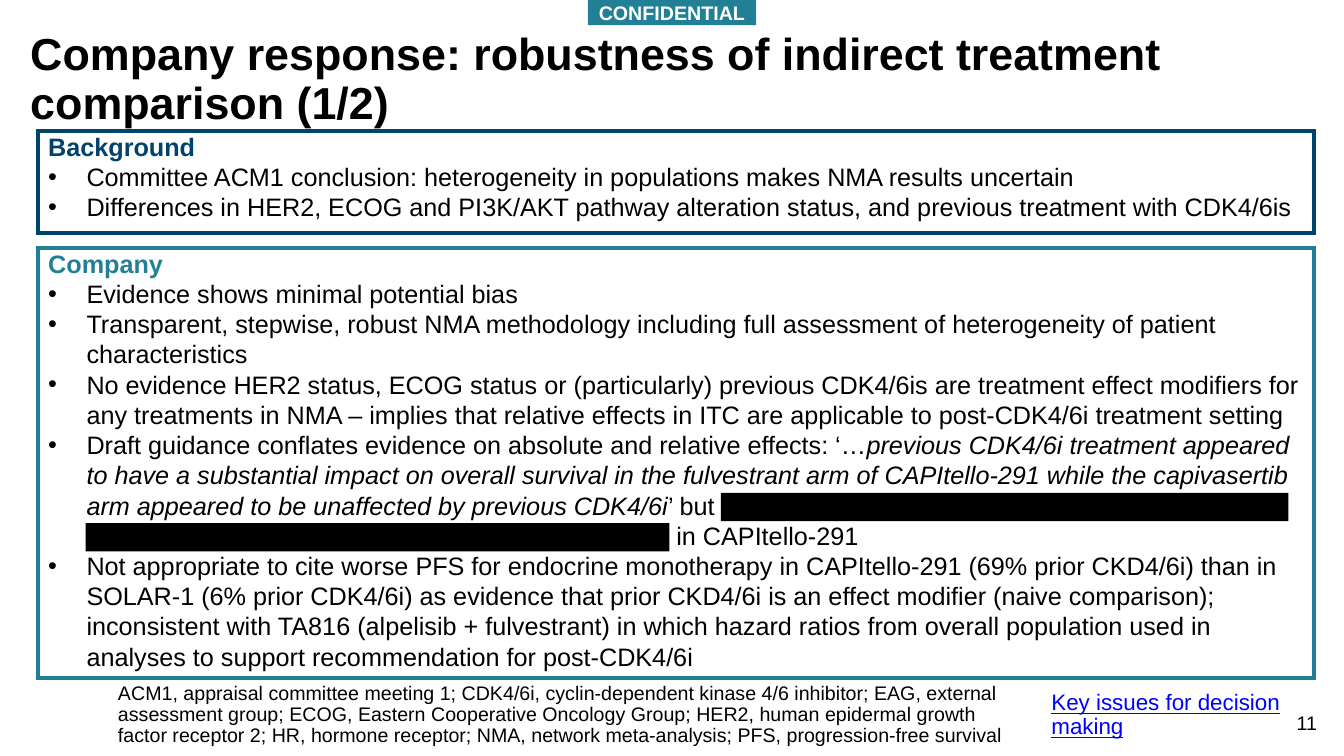
from lxml import etree
from pptx import Presentation
from pptx.dml.color import RGBColor
from pptx.enum.shapes import MSO_SHAPE
from pptx.enum.text import MSO_ANCHOR, MSO_AUTO_SIZE, PP_ALIGN
from pptx.oxml.ns import qn
from pptx.util import Inches, Pt

RECTANGLE = MSO_SHAPE.RECTANGLE
TOP, MIDDLE, BOTTOM = MSO_ANCHOR.TOP, MSO_ANCHOR.MIDDLE, MSO_ANCHOR.BOTTOM
LEFT, CENTER, RIGHT = PP_ALIGN.LEFT, PP_ALIGN.CENTER, PP_ALIGN.RIGHT
NO_FIT = MSO_AUTO_SIZE.NONE

BLACK = RGBColor(0x00, 0x00, 0x00)
WHITE = RGBColor(0xFF, 0xFF, 0xFF)
TEAL = RGBColor(0x22, 0x80, 0x96)
NAVY = RGBColor(0x00, 0x43, 0x6C)
LINK_BLUE = RGBColor(0x00, 0x00, 0xFF)

BACKGROUND = [
    "Committee ACM1 conclusion: heterogeneity in populations makes NMA results uncertain",
    "Differences in HER2, ECOG and PI3K/AKT pathway alteration status, and previous "
    "treatment with CDK4/6is",
]
# Text between asterisks is italic.
COMPANY = [
    "Evidence shows minimal potential bias",
    "Transparent, stepwise, robust NMA methodology including full assessment of "
    "heterogeneity of patient characteristics",
    "No evidence HER2 status, ECOG status or (particularly) previous CDK4/6is are "
    "treatment effect modifiers for any treatments in NMA – implies that relative "
    "effects in ITC are applicable to post-CDK4/6i treatment setting",
    "Draft guidance conflates evidence on absolute and relative effects: ‘…*previous "
    "CDK4/6i treatment appeared to have a substantial impact on overall survival in the "
    "fulvestrant arm of CAPItello-291 while the capivasertib arm appeared to be "
    "unaffected by previous CDK4/6i*’ but",
    "in CAPItello-291",
    "Not appropriate to cite worse PFS for endocrine monotherapy in CAPItello-291 (69% "
    "prior CKD4/6i) than in SOLAR-1 (6% prior CDK4/6i) as evidence that prior CKD4/6i is "
    "an effect modifier (naive comparison); inconsistent with TA816 (alpelisib + "
    "fulvestrant) in which hazard ratios from overall population used in analyses to "
    "support recommendation for post-CDK4/6i",
]
# Left indent of the words that follow the redaction bars on their line.
AFTER_REDACTION = {"in CAPItello-291": Inches(6.23)}
REDACTIONS = [(7.15, 4.89, 5.63, 0.28), (0.85, 5.19, 5.79, 0.28)]
ABBREVIATIONS = (
    "ACM1, appraisal committee meeting 1; CDK4/6i, cyclin-dependent kinase 4/6 inhibitor; "
    "EAG, external assessment group; ECOG, Eastern Cooperative Oncology Group; HER2, human "
    "epidermal growth factor receptor 2; HR, hormone receptor; NMA, network meta-analysis; "
    "PFS, progression-free survival"
)


class Page:
    font_name = "Arial"
    list_size = 18
    list_indent = Inches(0.38)

    def __init__(self, slide):
        self.slide = slide

    def style(self, para, size, color=BLACK, bold=False, align=LEFT, spacing=1.0):
        para.alignment = align
        para.line_spacing = spacing
        para.space_before = para.space_after = Pt(0)
        font = para.font
        font.name, font.size, font.bold = self.font_name, Pt(size), bold
        font.color.rgb = color

    def indent(self, para, left=0):
        """Indent the whole paragraph and show no bullet."""
        properties = para._p.get_or_add_pPr()
        properties.set("marL", str(left))
        properties.set("indent", "0")
        etree.SubElement(properties, qn("a:buNone"))

    def bullet(self, para):
        properties = para._p.get_or_add_pPr()
        properties.set("marL", str(self.list_indent))
        properties.set("indent", str(-self.list_indent))
        etree.SubElement(properties, qn("a:buFont")).set("typeface", self.font_name)
        etree.SubElement(properties, qn("a:buChar")).set("char", "•")

    def placeholder(self, index, text, place, size, anchor, bold=False):
        box = self.slide.placeholders[index]
        box.left, box.top, box.width, box.height = map(Inches, place)
        frame = box.text_frame
        frame.text = text
        frame.word_wrap = True
        frame.auto_size = NO_FIT
        frame.vertical_anchor = anchor
        self.indent(frame.paragraphs[0])
        self.style(frame.paragraphs[0], size, bold=bold, spacing=0.9)
        return frame

    def label(self, text, place, size, color=BLACK, align=LEFT, spacing=1.0):
        box = self.slide.shapes.add_textbox(*map(Inches, place))
        box.text_frame.word_wrap = True
        para = box.text_frame.paragraphs[0]
        para.text = text
        self.style(para, size, color, align=align, spacing=spacing)
        return para

    def rectangle(self, place):
        box = self.slide.shapes.add_shape(RECTANGLE, *map(Inches, place))
        box.shadow.inherit = False
        frame = box.text_frame
        frame.word_wrap = True
        frame.margin_top = frame.margin_bottom = 0
        return box

    def bar(self, place, color):
        box = self.rectangle(place)
        box.fill.solid()
        box.fill.fore_color.rgb = color
        box.line.fill.background()
        return box

    def banner(self, text, place, color):
        frame = self.bar(place, color).text_frame
        frame.vertical_anchor = MIDDLE
        para = frame.paragraphs[0]
        para.text = text
        self.style(para, 14, WHITE, bold=True, align=CENTER)

    def panel(self, heading, items, place, color):
        box = self.rectangle(place)
        box.fill.background()
        box.line.color.rgb = color
        box.line.width = Pt(3)
        outline = box.line._get_or_add_ln()
        etree.SubElement(outline, qn("a:miter")).set("lim", "800000")
        frame = box.text_frame
        frame.vertical_anchor = TOP
        frame.paragraphs[0].text = heading
        self.style(frame.paragraphs[0], self.list_size, color, bold=True)
        for item in items:
            para = frame.add_paragraph()
            if item in AFTER_REDACTION:
                self.indent(para, AFTER_REDACTION[item])
            else:
                self.bullet(para)
            self.style(para, self.list_size)
            for number, text in enumerate(item.split("*")):
                span = para.add_run()
                span.text = text
                if number % 2:
                    span.font.italic = True


def main():
    deck = Presentation()
    deck.slide_width, deck.slide_height = Inches(13.33), Inches(7.5)
    page = Page(deck.slides.add_slide(deck.slide_layouts[1]))

    page.label("11", (12.65, 7, 0.51, 0.4), 14, align=RIGHT)
    page.banner("CONFIDENTIAL", (5.83, 0, 1.67, 0.25), TEAL)
    page.placeholder(1, ABBREVIATIONS, (1.07, 6.73, 9.15, 0.77), 14, TOP)
    title = page.placeholder(
        0, "Company response: robustness of indirect treatment comparison (1/2)",
        (0.2, 0.29, 12.92, 1.01), 32, BOTTOM, bold=True)
    title.margin_bottom = Inches(0.02)
    page.panel("Company", COMPANY, (0.38, 2.46, 12.65, 4.27), TEAL)
    for place in REDACTIONS:
        page.bar(place, BLACK)
    page.panel("Background", BACKGROUND, (0.38, 1.3, 12.65, 1.01), NAVY)
    key_issues = page.label("Key issues for decision making", (10.33, 6.81, 2.7, 0.62),
                            16, LINK_BLUE, spacing=0.9)
    key_issues.font.underline = True

    deck.save("out.pptx")


if __name__ == "__main__":
    main()
